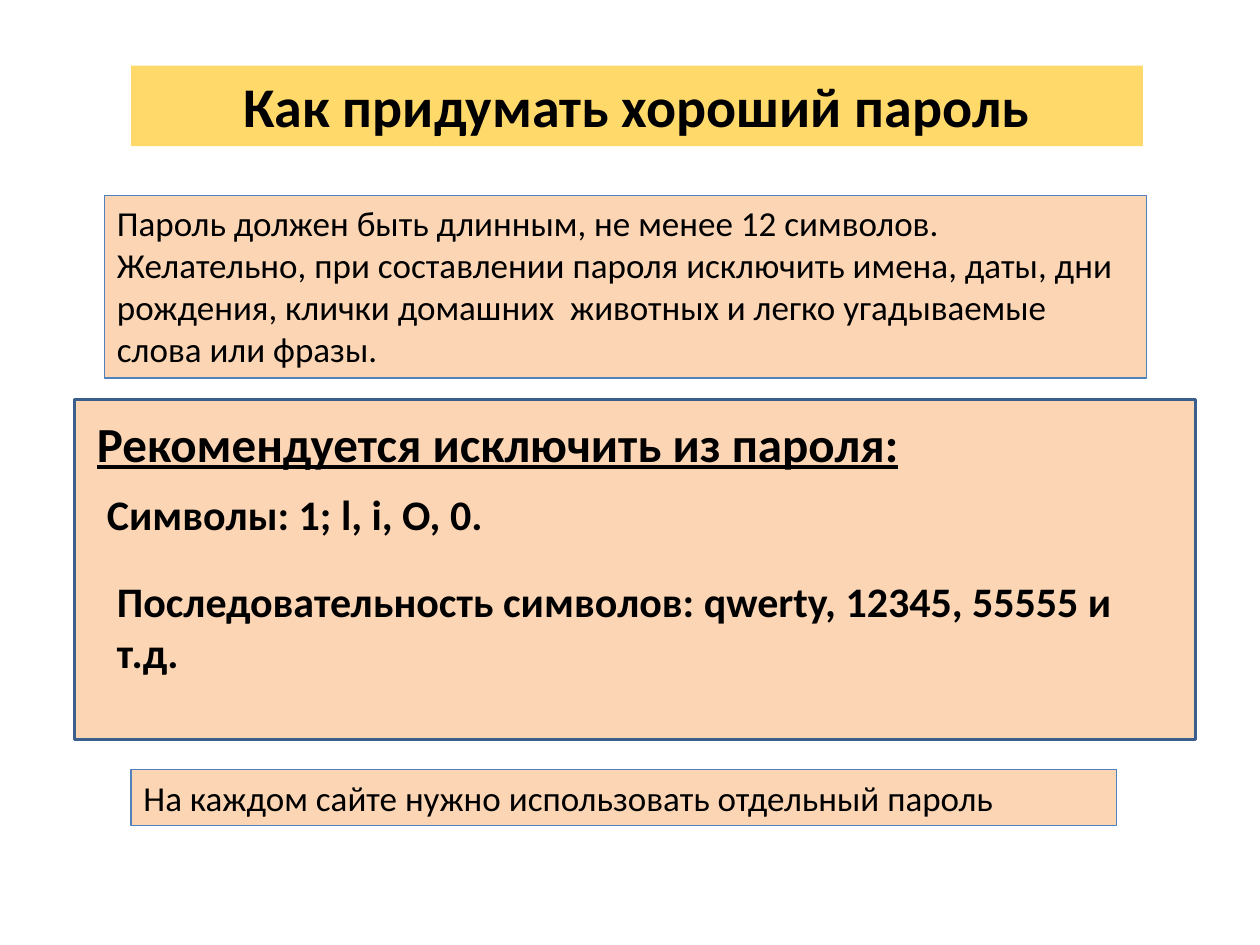
from lxml.etree import SubElement
from pptx import Presentation
from pptx.dml.color import RGBColor
from pptx.enum.shapes import MSO_SHAPE as Shape
from pptx.enum.text import MSO_ANCHOR as Anchor, MSO_AUTO_SIZE as AutoSize, PP_ALIGN as Align
from pptx.oxml.ns import qn
from pptx.util import Inches, Pt

PEACH, GOLD, BLUE, NAVY = "FCD5B5", "FFC000", "4F81BD", "3A5F8C"

TITLE = ("Как придумать хороший пароль", (1.04, 0.52, 8.03, 0.64))
PANEL = (0.59, 3.17, 8.9, 2.7)
ADVICE = [
    ("Пароль должен быть длинным, не менее 12 символов. Желательно, при составлении "
     "пароля исключить имена, даты, дни рождения, клички домашних  животных и легко "
     "угадываемые слова или фразы.", (0.83, 1.55, 8.27, 1.45)),
    ("На каждом сайте нужно использовать отдельный пароль", (1.04, 6.11, 7.82, 0.44)),
]
EXCLUSIONS = [
    ("Рекомендуется исключить из пароля:", (0.67, 3.23, 8.19, 0.57), 28, True),
    ("Символы: 1; l, i, О, 0.", (0.75, 3.83, 8.43, 0.5), 24, False),
    ("Последовательность символов: qwerty, 12345, 55555 и т.д.",
     (0.83, 4.52, 8.43, 0.91), 24, False),
]


def color(value):
    return RGBColor.from_string(value)


def inches(box):
    return [Inches(length) for length in box]


def write(shape, text, size=20, bold=False, underline=False, align=Align.LEFT):
    frame = shape.text_frame
    frame.word_wrap = True
    frame.auto_size = AutoSize.NONE
    frame.vertical_anchor = Anchor.TOP
    frame.text = text
    paragraph = frame.paragraphs[0]
    paragraph.alignment = align
    font = paragraph.runs[0].font
    font.name, font.size = "Calibri", Pt(size)
    font.bold, font.underline = bold, underline
    font.color.rgb = color("000000")


def paint(shape, fill, opacity=None):
    shape.fill.solid()
    shape.fill.fore_color.rgb = color(fill)
    if opacity:
        rgb = shape.element.spPr.find(qn("a:solidFill")).find(qn("a:srgbClr"))
        SubElement(rgb, qn("a:alpha"), val=str(opacity * 1000))


def add_panel(slide, box, line, width):
    panel = slide.shapes.add_shape(Shape.RECTANGLE, *inches(box))
    panel.shadow.inherit = False
    paint(panel, PEACH)
    panel.line.color.rgb = color(line)
    panel.line.width = Pt(width)
    return panel


def main():
    """Build the slide on choosing a good password."""
    presentation = Presentation()
    presentation.slide_width, presentation.slide_height = Inches(10), Inches(7.5)
    slide = presentation.slides.add_slide(presentation.slide_layouts[5])

    text, box = TITLE
    title = slide.shapes.title
    title.left, title.top, title.width, title.height = inches(box)
    paint(title, GOLD, opacity=58)
    write(title, text, size=32, bold=True, align=Align.CENTER)

    add_panel(slide, PANEL, NAVY, 2)
    for text, box, size, underline in EXCLUSIONS:
        write(slide.shapes.add_textbox(*inches(box)), text,
              size=size, bold=True, underline=underline)
    for text, box in ADVICE:
        write(add_panel(slide, box, BLUE, 0.75), text)

    presentation.save("out.pptx")


if __name__ == "__main__":
    main()
